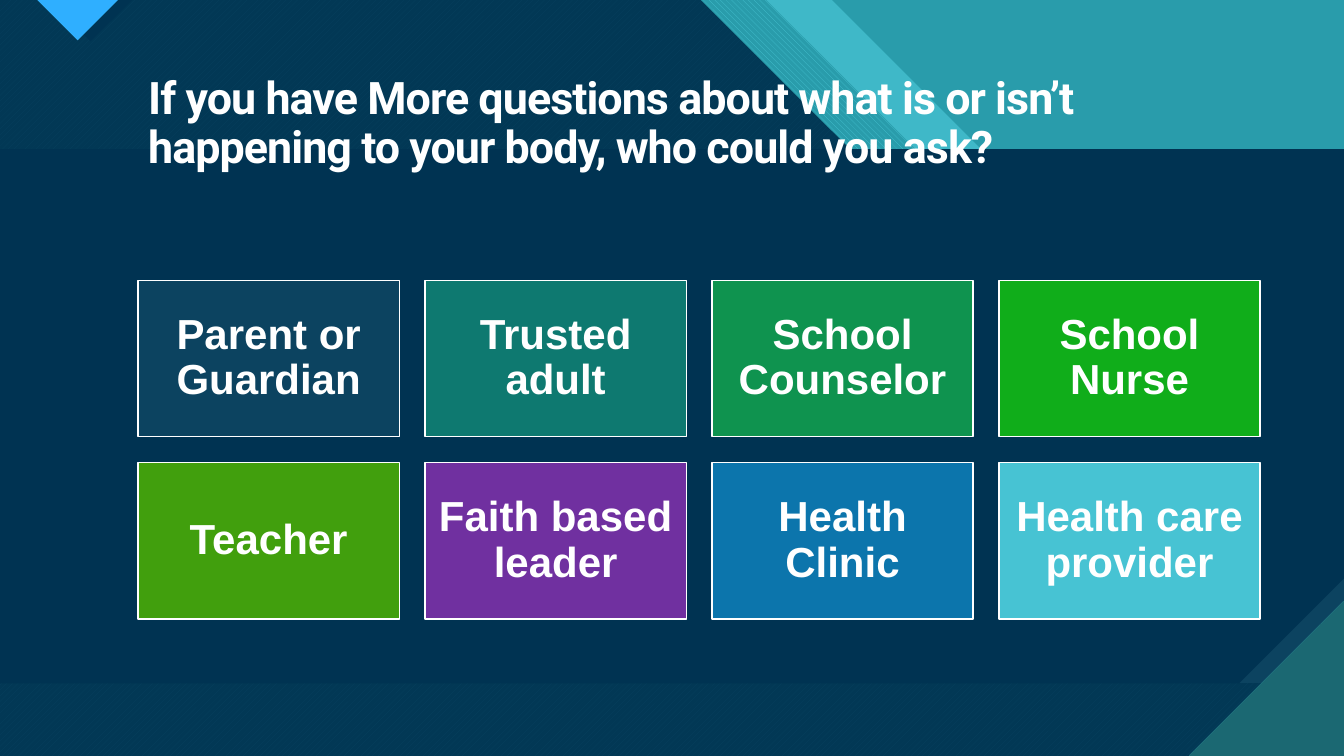
"""Build the slide about people to ask questions about your body."""
from dataclasses import dataclass
from lxml.etree import SubElement
from pptx import Presentation
from pptx.dml.color import RGBColor
from pptx.enum.dml import MSO_PATTERN
from pptx.enum.shapes import MSO_SHAPE
from pptx.enum.text import MSO_ANCHOR, PP_ALIGN
from pptx.oxml.ns import qn
from pptx.util import Inches, Pt


@dataclass(frozen=True)
class Theme:
    white: str = "FFFFFF"
    navy: str = "003352"
    ink: str = "0C4360"
    teal: str = "299CAB"
    deep: str = "1B6872"
    aqua: str = "47C3D3"
    blue: str = "2FAFFF"
    head: int = 32
    body: int = 30
    head_font: str = "Roboto"
    body_font: str = "Arial"


LOOK = Theme()
WIDE, HIGH = 13.33, 7.5
TITLE = ("If you have More questions about what is or isn’t "
         "happening to your body, who could you ask?")
CARDS = [
    ("Parent or Guardian", LOOK.ink), ("Trusted adult", "0E7970"),
    ("School Counselor", "0F934F"), ("School Nurse", "10AD1A"),
    ("Teacher", "419F0D"), ("Faith based leader", "7030A0"),
    ("Health Clinic", "0C75AC"), ("Health care provider", LOOK.aqua),
]
COLS, LEFT, TOP = 4, 1.37, 2.78
CARD_W, CARD_H, STEP_X, STEP_Y = 2.59, 1.55, 2.846, 1.81
BAND_TOP, BAND_END, SNIP = 1.48, 6.78, 1.04


def sweep(top, step, end):
    """Outline the area left of a slanted edge."""
    drop = 2.97
    return [(0, 0), (top, 0), (top + drop, drop), (step, drop),
            (WIDE, end), (WIDE, HIGH), (0, HIGH)]


DARK = sweep(6.95, 11.18, 5.12)
BACKDROP = [
    (sweep(8.25, 12.34, 3.96), dict(color=LOOK.aqua, alpha=74)),
    (sweep(7.6, 11.84, 4.47), dict(
        color=LOOK.aqua, back=LOOK.teal,
        weave=MSO_PATTERN.WIDE_DOWNWARD_DIAGONAL)),
    (DARK, dict(color=LOOK.aqua, back=LOOK.deep,
                weave=MSO_PATTERN.WIDE_UPWARD_DIAGONAL)),
    (DARK, dict(color=LOOK.navy, alpha=90)),
    ([(0.48, 0), (1.31, 0), (0.9, 0.41)], dict(color=LOOK.navy)),
    ([(0.37, 0), (1.17, 0), (0.77, 0.4)], dict(
        color=LOOK.blue, back=LOOK.deep, weave=MSO_PATTERN.DARK_HORIZONTAL)),
    ([(0, BAND_TOP), (WIDE, BAND_TOP), (WIDE, BAND_END), (0, BAND_END)], dict(
        color=LOOK.ink, back=LOOK.deep, weave=MSO_PATTERN.DARK_VERTICAL)),
    ([(0, BAND_TOP), (WIDE, BAND_TOP), (WIDE, BAND_END - SNIP),
      (WIDE - SNIP, BAND_END), (0, BAND_END)], dict(color=LOOK.navy)),
    ([(11.79, HIGH), (WIDE, HIGH), (WIDE, 5.96)], dict(
        color=LOOK.deep, back=LOOK.aqua, weave=MSO_PATTERN.DARK_HORIZONTAL)),
]


def paint(shape, color, back=None, weave=None, alpha=None):
    """Fill a shape with a plain, clear or woven colour."""
    shape.shadow.inherit = False
    fill = shape.fill
    if weave is not None:
        fill.patterned()
        fill.pattern = weave
        fill.back_color.rgb = RGBColor.from_string(back)
    else:
        fill.solid()
    fill.fore_color.rgb = RGBColor.from_string(color)
    if alpha:
        tone = next(shape.element.spPr.iter(qn("a:srgbClr")))
        SubElement(tone, qn("a:alpha"), val=str(alpha * 1000))


def draw(slide, points, **style):
    """Draw one filled outline without a border."""
    dots = [(Inches(x), Inches(y)) for x, y in points]
    pen = slide.shapes.build_freeform(*dots[0])
    pen.add_line_segments(dots[1:], close=True)
    shape = pen.convert_to_shape()
    paint(shape, **style)
    shape.line.fill.background()


def put(shape, text, size, font, align, inset, track=0):
    """Set formatted text in a shape."""
    frame = shape.text_frame
    frame.word_wrap = True
    frame.vertical_anchor = MSO_ANCHOR.MIDDLE
    frame.margin_left = frame.margin_right = Inches(inset)
    frame.margin_top = frame.margin_bottom = Inches(inset)
    para = frame.paragraphs[0]
    para.alignment, para.line_spacing = align, 0.9
    run = para.add_run()
    run.text = text
    run.font.name, run.font.size, run.font.bold = font, Pt(size), True
    run.font.color.rgb = RGBColor.from_string(LOOK.white)
    if track:
        run.font._element.set("spc", str(round(track * 100)))


def main():
    """Make and save the deck."""
    deck = Presentation()
    deck.slide_width, deck.slide_height = Inches(WIDE), Inches(HIGH)
    slide = deck.slides.add_slide(deck.slide_layouts[5])
    ground = slide.background.fill
    ground.solid()
    ground.fore_color.rgb = RGBColor.from_string(LOOK.teal)
    for points, style in BACKDROP:
        draw(slide, points, **style)

    title = slide.shapes.title
    title.left, title.top = Inches(LEFT), Inches(0.42)
    title.width, title.height = Inches(11.13), Inches(1.63)
    put(title, TITLE, size=LOOK.head, font=LOOK.head_font,
        align=PP_ALIGN.LEFT, inset=0.1, track=-0.7)
    title.element.getparent().append(title.element)

    for i, (text, color) in enumerate(CARDS):
        row, col = divmod(i, COLS)
        card = slide.shapes.add_shape(
            MSO_SHAPE.RECTANGLE,
            Inches(LEFT + col * STEP_X), Inches(TOP + row * STEP_Y),
            Inches(CARD_W), Inches(CARD_H))
        paint(card, color)
        card.line.color.rgb = RGBColor.from_string(LOOK.white)
        card.line.width = Pt(1)
        put(card, text, size=LOOK.body, font=LOOK.body_font,
            align=PP_ALIGN.CENTER, inset=0.12)
    deck.save("out.pptx")


if __name__ == "__main__":
    main()
